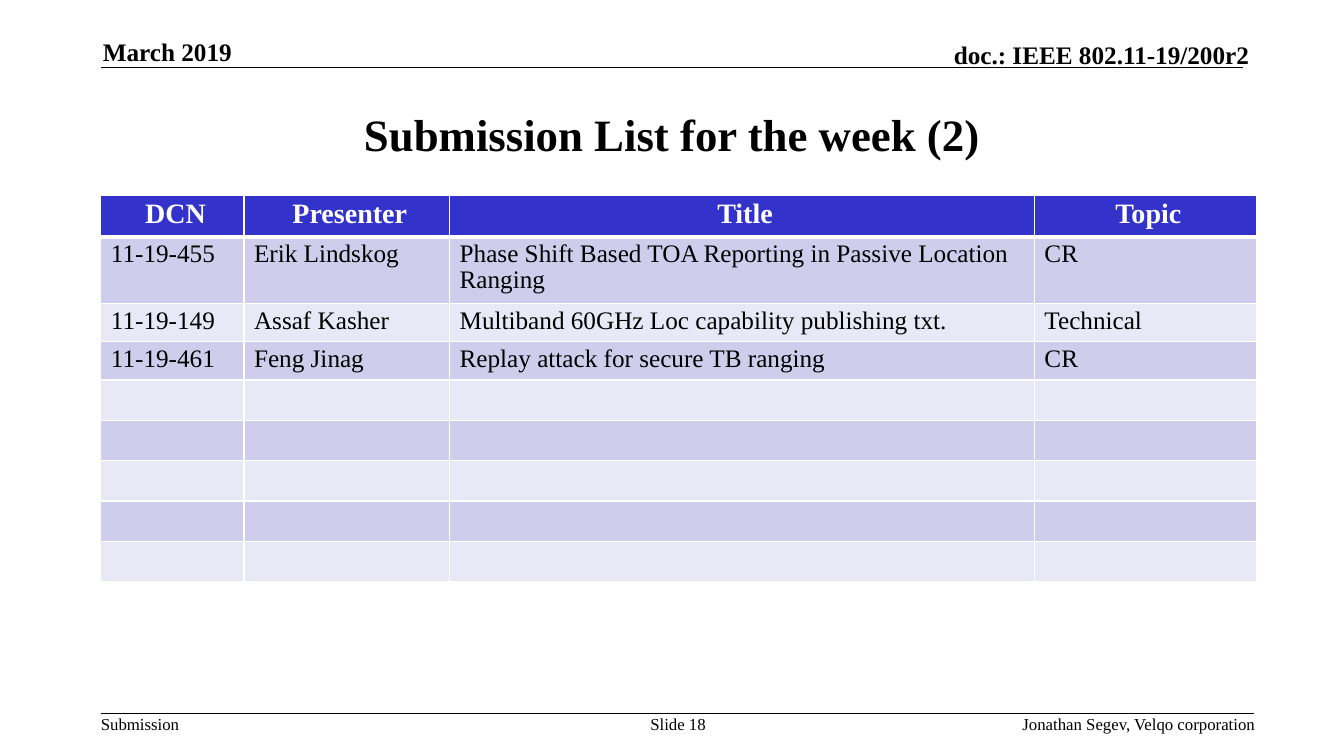
from collections import namedtuple

from lxml import etree
from pptx import Presentation
from pptx.dml.color import RGBColor
from pptx.enum.shapes import MSO_CONNECTOR
from pptx.enum.text import MSO_ANCHOR, PP_ALIGN
from pptx.oxml.ns import qn
from pptx.util import Inches, Pt

Box = namedtuple("Box", "left top width height")

LEFT, CENTER, RIGHT = PP_ALIGN.LEFT, PP_ALIGN.CENTER, PP_ALIGN.RIGHT
TOP, MIDDLE, BOTTOM = MSO_ANCHOR.TOP, MSO_ANCHOR.MIDDLE, MSO_ANCHOR.BOTTOM
STRAIGHT = MSO_CONNECTOR.STRAIGHT

FONT = "Times New Roman"
BLACK = RGBColor(0x00, 0x00, 0x00)
WHITE = RGBColor(0xFF, 0xFF, 0xFF)
HEADER_BLUE = RGBColor(0x33, 0x33, 0xCC)
BANDS = (RGBColor(0xE8, 0xE8, 0xF6), RGBColor(0xCE, 0xCE, 0xEC))

SLIDE_WIDTH, SLIDE_HEIGHT = 13.33, 7.5
COLUMN_WIDTHS = (1.42, 2.04, 5.8, 2.2)
HEADER_HEIGHT, TALL_HEIGHT, ROW_HEIGHT = 0.4, 0.65, 0.38
TABLE_LINE_SPACING = 0.93
EMPTY_ROWS = 5
SUBMISSIONS = [
    ("DCN", "Presenter", "Title", "Topic"),
    ("11-19-455", "Erik Lindskog",
     "Phase Shift Based TOA Reporting in Passive Location Ranging", "CR"),
    ("11-19-149", "Assaf Kasher",
     "Multiband 60GHz Loc capability publishing txt.", "Technical"),
    ("11-19-461", "Feng Jinag", "Replay attack for secure TB ranging", "CR"),
] + [("",) * len(COLUMN_WIDTHS)] * EMPTY_ROWS


def write_text(text_frame, text, size=12, bold=False, color=BLACK,
               align=LEFT, line_spacing=None):
    paragraph = text_frame.paragraphs[0]
    paragraph.alignment = align
    paragraph.line_spacing = line_spacing
    if not text:
        ending = etree.SubElement(paragraph._p, qn("a:endParaRPr"), sz=str(size * 100))
        etree.SubElement(ending, qn("a:latin"), typeface=FONT)
        return
    run = paragraph.add_run()
    run.text = text
    run.font.name = FONT
    run.font.size = Pt(size)
    run.font.bold = bold
    run.font.color.rgb = color


def add_label(slide, box, text, anchor=TOP, wrap=True, **text_format):
    shape = slide.shapes.add_textbox(*map(Inches, box))
    frame = shape.text_frame
    frame.margin_left = frame.margin_right = frame.margin_top = frame.margin_bottom = 0
    frame.vertical_anchor = anchor
    frame.word_wrap = wrap
    write_text(frame, text, **text_format)


def add_rule(slide, left, top, width):
    start, end, level = Inches(left), Inches(left + width), Inches(top)
    connector = slide.shapes.add_connector(STRAIGHT, start, level, end, level)
    connector.line.color.rgb = BLACK
    connector.line.width = Pt(1)
    etree.SubElement(connector._element.spPr, qn("a:effectLst"))


def add_header(slide, box):
    right = box.left + box.width
    add_rule(slide, box.left, box.top + box.height, box.width)
    add_label(slide, Box(right - 5.04, box.top + 0.03, 5.1, 0.3),
              "doc.: IEEE 802.11-19/200r2", anchor=BOTTOM, size=18, bold=True, align=RIGHT)
    add_label(slide, Box(box.left + 0.02, box.top, 2.73, 0.3),
              "March 2019", anchor=BOTTOM, size=18, bold=True)


def add_title(slide, box):
    title = slide.shapes.title
    title.left, title.top, title.width, title.height = map(Inches, box)
    title.text_frame.vertical_anchor = MIDDLE
    write_text(title.text_frame, "Submission List for the week (2)",
               size=32, bold=True, align=CENTER)


def add_footer(slide, box):
    add_rule(slide, box.left, box.top, box.width)
    add_label(slide, Box(box.left, box.top, 0.79, 0.2), "Submission", wrap=False)
    add_label(slide, Box(box.left + 5.34, box.top, 0.77, box.height),
              "Slide 18", align=CENTER)
    add_label(slide, Box(box.left + box.width - 4.63, box.top, 4.64, 0.2),
              "Jonathan Segev, Velqo corporation", align=RIGHT)


def add_borders(cell, bottom_width):
    properties = cell._tc.get_or_add_tcPr()
    for side, width in (("L", 1), ("R", 1), ("T", 1), ("B", bottom_width)):
        line = etree.SubElement(properties, qn(f"a:ln{side}"), w=str(Pt(width)))
        fill = etree.SubElement(line, qn("a:solidFill"))
        etree.SubElement(fill, qn("a:srgbClr"), val=str(WHITE))


def format_cell(cell, text, row_index):
    is_header = row_index == 0
    add_borders(cell, 3 if is_header else 1)
    cell.fill.solid()
    cell.fill.fore_color.rgb = HEADER_BLUE if is_header else BANDS[row_index % 2]
    cell.margin_right = Inches(0.04 if is_header else 0.1)
    write_text(cell.text_frame, text, size=20 if is_header else 18, bold=is_header,
               color=WHITE if is_header else BLACK,
               align=CENTER if is_header else LEFT, line_spacing=TABLE_LINE_SPACING)


def add_submissions(slide, box):
    table = slide.shapes.add_table(
        len(SUBMISSIONS), len(COLUMN_WIDTHS), *map(Inches, box)).table
    for column, width in zip(table.columns, COLUMN_WIDTHS):
        column.width = Inches(width)
    special_heights = {0: HEADER_HEIGHT, 1: TALL_HEIGHT}
    for row_index, values in enumerate(SUBMISSIONS):
        row = table.rows[row_index]
        row.height = Inches(special_heights.get(row_index, ROW_HEIGHT))
        for cell, text in zip(row.cells, values):
            format_cell(cell, text, row_index)


def main():
    presentation = Presentation()
    presentation.slide_width = Inches(SLIDE_WIDTH)
    presentation.slide_height = Inches(SLIDE_HEIGHT)
    slide = presentation.slides.add_slide(presentation.slide_layouts.get_by_name("Title Only"))
    add_header(slide, Box(1, 0.36, 11.33, 0.31))
    add_title(slide, Box(1, 0.75, 11.33, 1.16))
    add_submissions(slide, Box(1, 1.94, sum(COLUMN_WIDTHS), 3.7))
    add_footer(slide, Box(1, 7.08, 11.44, 0.4))
    presentation.save("out.pptx")


if __name__ == "__main__":
    main()
